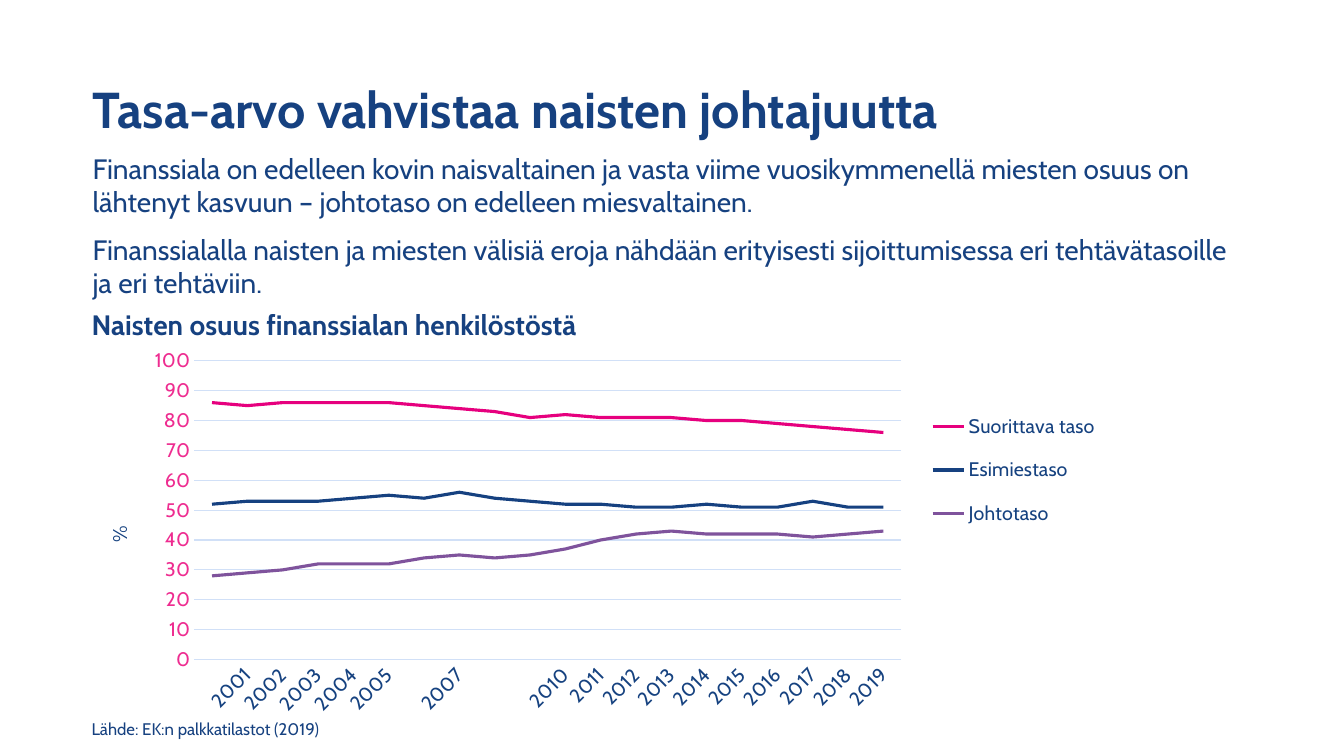
import pptx
import pptx.chart.data
import pptx.dml.color
import pptx.enum.chart
import pptx.enum.text
import pptx.oxml
import pptx.oxml.ns
import pptx.util
from lxml import etree

PX = 9144  # 100 px to the inch
FONT = "Cabin"
NAVY = pptx.dml.color.RGBColor(0x16, 0x41, 0x80)
LABEL_NAVY = pptx.dml.color.RGBColor(0x16, 0x42, 0x80)
MAGENTA = pptx.dml.color.RGBColor(0xE6, 0x00, 0x7E)
PINK = pptx.dml.color.RGBColor(0xEE, 0x2C, 0x90)
PURPLE = pptx.dml.color.RGBColor(0x7F, 0x53, 0x9C)
PALE_BLUE = pptx.dml.color.RGBColor(0xD1, 0xE0, 0xF7)

TITLE = "Tasa-arvo vahvistaa naisten johtajuutta"
BODY = [
    "Finanssiala on edelleen kovin naisvaltainen ja vasta viime vuosikymmenellä "
    "miesten osuus on lähtenyt kasvuun – johtotaso on edelleen miesvaltainen.",
    "Finanssialalla naisten ja miesten välisiä eroja nähdään erityisesti "
    "sijoittumisessa eri tehtävätasoille ja eri tehtäviin.",
]
CHART_HEADING = "Naisten osuus finanssialan henkilöstöstä"
SOURCE = "Lähde: EK:n palkkatilastot (2019)"
YEARS = [str(year) for year in range(2000, 2020)]
LEVELS = [
    ("Suorittava taso", MAGENTA,
     [86, 85, 86, 86, 86, 86, 85, 84, 83, 81, 82, 81, 81, 81, 80, 80, 79, 78, 77, 76]),
    ("Esimiestaso", NAVY,
     [52, 53, 53, 53, 54, 55, 54, 56, 54, 53, 52, 52, 51, 51, 52, 51, 51, 53, 51, 51]),
    ("Johtotaso", PURPLE,
     [28, 29, 30, 32, 32, 32, 34, 35, 34, 35, 37, 40, 42, 43, 42, 42, 42, 41, 42, 43]),
]


def style_font(font, size, color, bold=False):
    font.name = FONT
    font.size = pptx.util.Pt(size)
    font.bold = bold
    font.color.rgb = color


def add_text(slide, box, paragraphs, size, bold=False, middle=False,
             space_before=0, line_spacing=None):
    frame = slide.shapes.add_textbox(*(length * PX for length in box)).text_frame
    frame.word_wrap = True
    if middle:
        frame.vertical_anchor = pptx.enum.text.MSO_ANCHOR.MIDDLE
    for index, text in enumerate(paragraphs):
        paragraph = frame.add_paragraph() if index else frame.paragraphs[0]
        paragraph.text = text
        if index:
            paragraph.space_before = pptx.util.Pt(space_before)
        if line_spacing:
            paragraph.line_spacing = line_spacing
        style_font(paragraph.font, size, NAVY, bold)


def set_layout(parent, index, inner=False, **fractions):
    """Place a chart part by fractions of the chart (x, y, w, h)."""
    for old in parent.findall(pptx.oxml.ns.qn("c:layout")):
        parent.remove(old)
    layout = pptx.oxml.parse_xml(
        f'<c:layout {pptx.oxml.ns.nsdecls("c")}><c:manualLayout/></c:layout>')
    settings = [("layoutTarget", "inner")] if inner else []
    settings += [("xMode", "edge"), ("yMode", "edge"), *fractions.items()]
    for tag, value in settings:
        etree.SubElement(layout[0], pptx.oxml.ns.qn(f"c:{tag}")).set("val", str(value))
    parent.insert(index, layout)


def style_axes(chart):
    no_tick = pptx.enum.chart.XL_TICK_MARK.NONE
    years, share = chart.category_axis, chart.value_axis
    for axis, color in ((years, LABEL_NAVY), (share, PINK)):
        axis.major_tick_mark = axis.minor_tick_mark = no_tick
        style_font(axis.tick_labels.font, 14, color)
    years.has_major_gridlines = False
    share.has_major_gridlines = True
    for line in (years.format.line, share.major_gridlines.format.line):
        line.color.rgb = PALE_BLUE
        line.width = pptx.util.Pt(0.75)
    label_body = years._element.find(pptx.oxml.ns.qn("c:txPr")).find(
        pptx.oxml.ns.qn("a:bodyPr"))
    label_body.set("rot", "-2700000")
    label_body.set("vert", "horz")

    share.format.line.fill.background()
    share.minimum_scale, share.maximum_scale, share.major_unit = 0, 100, 10
    share.tick_labels.number_format = "0"
    share.tick_labels.number_format_is_linked = False
    unit = share.axis_title.text_frame
    unit.text = "%"
    style_font(unit.paragraphs[0].font, 14, LABEL_NAVY)
    unit_body = unit._txBody.find(pptx.oxml.ns.qn("a:bodyPr"))
    unit_body.set("rot", "-5400000")
    unit_body.set("vert", "horz")
    set_layout(share.axis_title._element, 1, x=0.02, y=0.47)


def add_share_chart(slide, box):
    data = pptx.chart.data.CategoryChartData(number_format="0")
    data.categories = YEARS
    for name, _, values in LEVELS:
        data.add_series(name, values)
    chart = slide.shapes.add_chart(
        pptx.enum.chart.XL_CHART_TYPE.LINE, *(length * PX for length in box), data).chart
    chart.has_title = False
    style_font(chart.font, 14, LABEL_NAVY)
    chart.plots[0].vary_by_categories = False
    for series, (_, color, _) in zip(chart.plots[0].series, LEVELS):
        series.smooth = False
        series.marker.style = pptx.enum.chart.XL_MARKER_STYLE.NONE
        series.format.line.color.rgb = color
        series.format.line.width = pptx.util.Pt(2.25)
    style_axes(chart)

    chart.has_legend = True
    chart.legend.position = pptx.enum.chart.XL_LEGEND_POSITION.RIGHT
    chart.legend.include_in_layout = False
    style_font(chart.legend.font, 14, LABEL_NAVY)
    set_layout(chart.legend._element, 1, x=0.82, y=0.14, w=0.18, h=0.39)
    plot_area = chart._chartSpace.chart.plotArea
    set_layout(plot_area, 0, inner=True, x=0.11, y=0.05, w=0.69, h=0.78)


def build_slide(presentation):
    slide = presentation.slides.add_slide(presentation.slide_layouts[6])
    add_share_chart(slide, (81, 339, 1016, 380))
    add_text(slide, (82, 39, 1150, 145), [TITLE], 36, bold=True, middle=True,
             line_spacing=0.9)
    add_text(slide, (82, 145, 1150, 430), BODY, 20, space_before=10)
    add_text(slide, (81, 300, 829, 44), [CHART_HEADING], 20, bold=True, middle=True)
    add_text(slide, (81, 708, 323, 30), [SOURCE], 12)


def main():
    presentation = pptx.Presentation()
    presentation.slide_width = 1333 * PX
    presentation.slide_height = 750 * PX
    build_slide(presentation)
    presentation.save("out.pptx")


if __name__ == "__main__":
    main()
